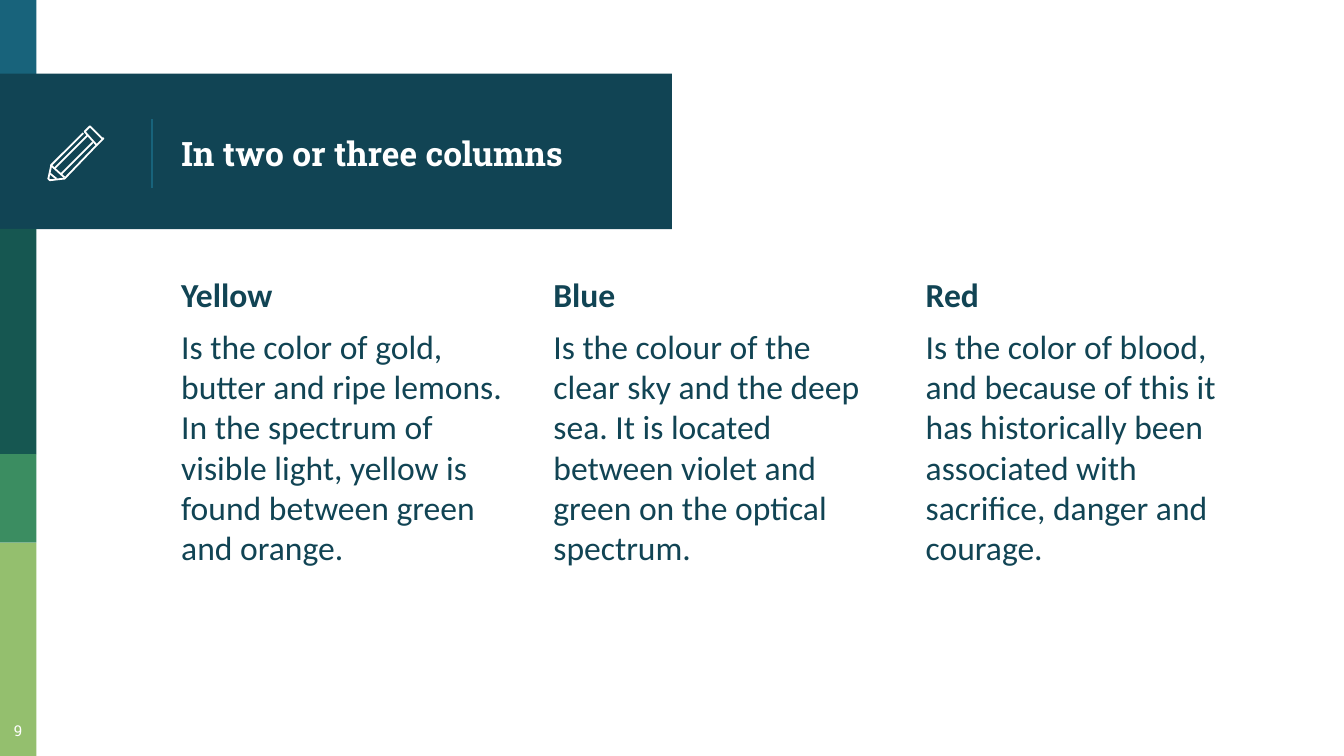
from typing import NamedTuple

from lxml.etree import SubElement
from pptx import Presentation
from pptx.dml.color import RGBColor
from pptx.enum.shapes import MSO_CONNECTOR, MSO_SHAPE
from pptx.enum.text import MSO_ANCHOR, MSO_AUTO_SIZE, PP_ALIGN
from pptx.oxml.ns import qn
from pptx.util import Pt

NAVY, TEAL, WHITE = "114454", "18637B", "FFFFFF"
SLAB, SANS = "Roboto Slab", "Calibri"
LEFT, PITCH = 90, 199.4


class Box(NamedTuple):
    x: float
    y: float
    w: float
    h: float


class Bar(NamedTuple):
    box: Box
    fill: str


class Column(NamedTuple):
    head: str
    body: str


class Stroke(NamedTuple):
    points: list[tuple[int, int]]
    closed: bool = False


BARS = [
    Bar(Box(0, 0, 19.5, 42), TEAL),
    Bar(Box(0, 39.5, 360, 83.3), NAVY),
    Bar(Box(0, 122.6, 19.5, 120.7), "165751"),
    Bar(Box(0, 243.3, 19.5, 47.5), "3B8D61"),
    Bar(Box(0, 290.8, 19.5, 114.2), "94BF6E"),
]

COLUMNS = [
    Column("Yellow", "Is the color of gold, butter and ripe lemons. In the spectrum of "
           "visible light, yellow is found between green and orange."),
    Column("Blue", "Is the colour of the clear sky and the deep sea. It is located "
           "between violet and green on the optical spectrum."),
    Column("Red", "Is the color of blood, and because of this it has historically been "
           "associated with sacrifice, danger and courage."),
]

UNIT = 0.72  # points in one step of the pencil's grid
PENCIL = [
    Stroke([(76, 103), (68, 95), (67, 94), (66, 95), (63, 98), (72, 108),
            (76, 104), (77, 103)], closed=True),
    Stroke([(69, 106), (45, 130)]),
    Stroke([(62, 99), (38, 123), (38, 124), (36, 133), (37, 134), (38, 134),
            (47, 133), (48, 133), (72, 108)]),
    Stroke([(41, 125), (65, 101)]),
    Stroke([(42, 133), (37, 129)]),
    Stroke([(38, 123), (48, 132)]),
]


def tint(value: str) -> RGBColor:
    return RGBColor.from_string(value)


def place(shape, box: Box) -> None:
    for name, value in zip(("left", "top", "width", "height"), box):
        setattr(shape, name, Pt(value))


def frame(shape, anchor: MSO_ANCHOR = MSO_ANCHOR.TOP):
    """Set wrapping, anchor and insets, and return the text frame."""
    text = shape.text_frame
    form = {"word_wrap": True, "auto_size": MSO_AUTO_SIZE.NONE, "vertical_anchor": anchor}
    form |= {f"margin_{side}": Pt(7.2) for side in ("left", "top", "right", "bottom")}
    for name, value in form.items():
        setattr(text, name, value)
    return text


def write(para, words: str, face: str, size: float, ink: str, bold: bool = False,
          align: PP_ALIGN = PP_ALIGN.LEFT, before: float = 0) -> None:
    para.alignment, para.space_before = align, Pt(before)
    run = para.add_run()
    run.text = words
    for name, value in {"name": face, "size": Pt(size), "bold": bold}.items():
        setattr(run.font, name, value)
    run.font.color.rgb = tint(ink)


def text_box(shapes, box: Box):
    return frame(shapes.add_textbox(*map(Pt, box)))


def draw_bar(shapes, bar: Bar) -> None:
    shape = shapes.add_shape(MSO_SHAPE.RECTANGLE, *map(Pt, bar.box))
    shape.shadow.inherit = False
    shape.fill.solid()
    shape.fill.fore_color.rgb = tint(bar.fill)
    shape.line.fill.background()


def draw_rule(shapes, x: float, top: float, end: float) -> None:
    rule = shapes.add_connector(MSO_CONNECTOR.STRAIGHT, Pt(x), Pt(top), Pt(x), Pt(end))
    rule.line.color.rgb = tint(TEAL)
    rule.line.width = Pt(0.75)
    SubElement(rule.element.spPr, qn("a:effectLst"))


def draw_stroke(shapes, stroke: Stroke) -> None:
    first, *rest = stroke.points
    pen = shapes.build_freeform(*first, scale=Pt(UNIT))
    pen.add_line_segments(rest, close=stroke.closed)
    shape = pen.convert_to_shape()
    shape.shadow.inherit = False
    shape.fill.background()
    shape.line.color.rgb = tint(WHITE)
    shape.line.width = Pt(0.96)


def draw_column(shapes, index: int, column: Column) -> None:
    text = text_box(shapes, Box(LEFT + index * PITCH, 139.7, 190, 248.4))
    write(text.paragraphs[0], column.head, SANS, 18, NAVY, bold=True, before=6)
    write(text.add_paragraph(), column.body, SANS, 18, NAVY, before=6)


def main() -> None:
    deck = Presentation()
    deck.slide_width, deck.slide_height = Pt(720), Pt(405)
    slide = deck.slides.add_slide(deck.slide_layouts[5])
    shapes = slide.shapes
    for bar in BARS:
        draw_bar(shapes, bar)
    draw_rule(shapes, 81.5, 64, 100.8)

    title = shapes.title
    place(title, Box(LEFT, 41.8, 252.7, 80.6))
    write(frame(title, MSO_ANCHOR.MIDDLE).paragraphs[0],
          "In two or three columns", SLAB, 18, WHITE, bold=True)
    shapes.element.append(title.element)  # bring the title in front of its banner

    for index, column in enumerate(COLUMNS):
        draw_column(shapes, index, column)
    icon = shapes.add_group_shape()
    for stroke in PENCIL:
        draw_stroke(icon.shapes, stroke)
    number = text_box(shapes, Box(-4, 379.5, 27.5, 25.5))
    write(number.paragraphs[0], "9", SLAB, 8, WHITE, align=PP_ALIGN.CENTER)
    deck.save("out.pptx")


if __name__ == "__main__":
    main()
